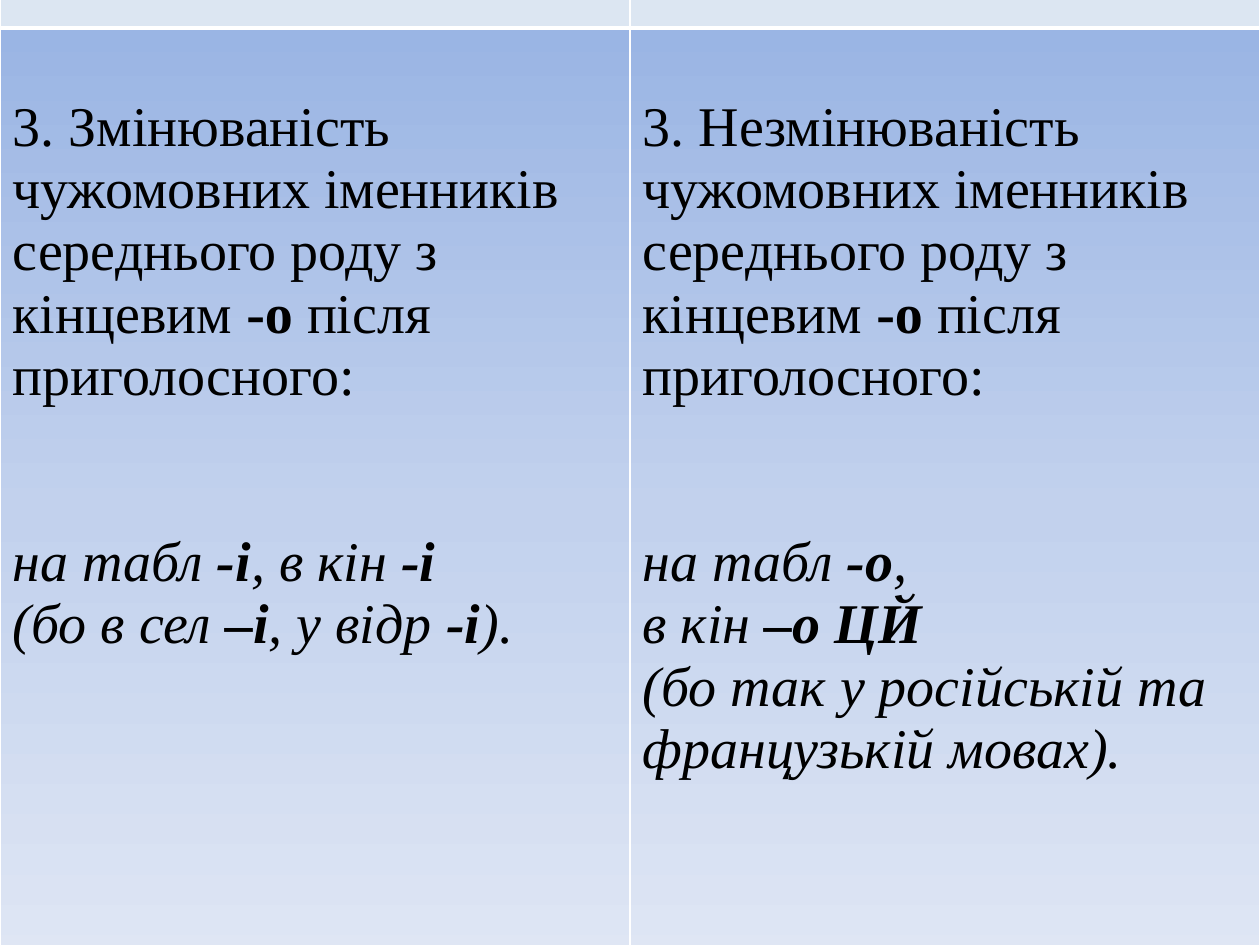
from copy import deepcopy

from lxml.etree import SubElement
from pptx import Presentation
from pptx.dml.color import RGBColor
from pptx.oxml.ns import qn
from pptx.util import Pt

FONT, SIZE, LINE = "Times New Roman", 32, 35.5
HEADER_FILL = "DCE6F2"
GRADIENT = ["9AB5E4", "C2D1ED", "E1E8F5"]
TOP, ROW_HEIGHTS, COL_WIDTH = -30, [46, 553], 360

RULE_START = "після приголосного:"
COLUMNS = [
    [
        [("3. Змінюваність чужомовних іменників середнього роду з кінцевим ", ""),
         ("-о ", "b"), (RULE_START, "")],
        [("на табл ", "i"), ("-і", "bi"), (", в кін ", "i"), ("-і", "bi")],
        [("(бо в сел ", "i"), ("–і", "bi"), (", у відр ", "i"), ("-і", "bi"), (").", "i")],
    ],
    [
        [("3. Незмінюваність чужомовних іменників середнього роду з кінцевим ", ""),
         ("-о ", "b"), (RULE_START, "")],
        [("на табл ", "i"), ("-о", "bi"), (",", "i")],
        [("в кін ", "i"), ("–о ЦЙ", "bi")],
        [("(бо так у російській та французькій мовах).", "i")],
    ],
]


def paint(color, value):
    color.rgb = RGBColor.from_string(value)


def set_borders(cell, **widths):
    tc_pr = cell._tc.get_or_add_tcPr()
    for i, side in enumerate("LRTB"):
        ln = SubElement(tc_pr, qn(f"a:ln{side}"), w=str(Pt(widths.get(side, 1))))
        fill = SubElement(ln, qn("a:solidFill"))
        SubElement(fill, qn("a:srgbClr"), val="FFFFFF")
        tc_pr.insert(i, ln)


def set_gradient(cell, colors):
    cell.fill.gradient()
    cell.fill.gradient_angle = 270
    stops = cell._tc.tcPr.find(".//" + qn("a:gsLst"))
    stops.insert(1, deepcopy(stops[0]))
    for i, (stop, value) in enumerate(zip(cell.fill.gradient_stops, colors)):
        stop.position = i / (len(colors) - 1)
        paint(stop.color, value)


def write(cell, paragraphs):
    tf = cell.text_frame
    cell.margin_top = Pt(3.6 + LINE)
    for i, parts in enumerate(paragraphs):
        p = tf.paragraphs[0] if i == 0 else tf.add_paragraph()
        if i == 1:
            p.space_before = Pt(2 * LINE)
        for text, style in parts:
            r = p.add_run()
            r.text = text
            r.font.name, r.font.size = FONT, Pt(SIZE)
            r.font.bold, r.font.italic = "b" in style, "i" in style
            paint(r.font.color, "000000")


prs = Presentation()
prs.slide_width, prs.slide_height = Pt(720), Pt(540)
s = prs.slides.add_slide(prs.slide_layouts[6])
table = s.shapes.add_table(2, len(COLUMNS), Pt(0), Pt(TOP),
                           Pt(COL_WIDTH * len(COLUMNS)), Pt(sum(ROW_HEIGHTS))).table
for row, height in zip(table.rows, ROW_HEIGHTS):
    row.height = Pt(height)

for col, paragraphs in enumerate(COLUMNS):
    table.columns[col].width = Pt(COL_WIDTH)
    header, body = table.cell(0, col), table.cell(1, col)
    header.fill.solid()
    paint(header.fill.fore_color, HEADER_FILL)
    set_borders(header, B=3)
    set_gradient(body, GRADIENT)
    set_borders(body, T=3)
    write(body, paragraphs)

prs.save("out.pptx")
